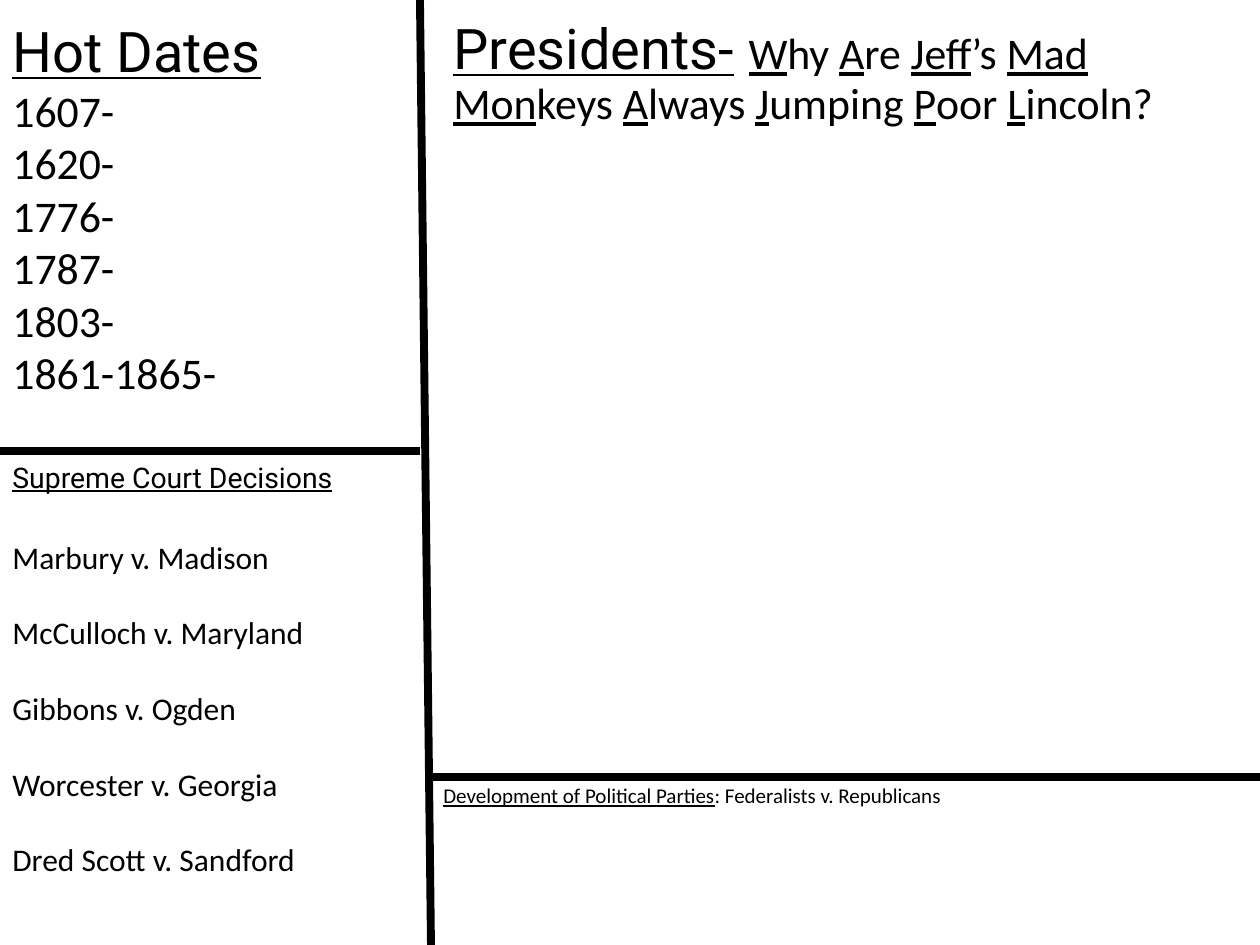
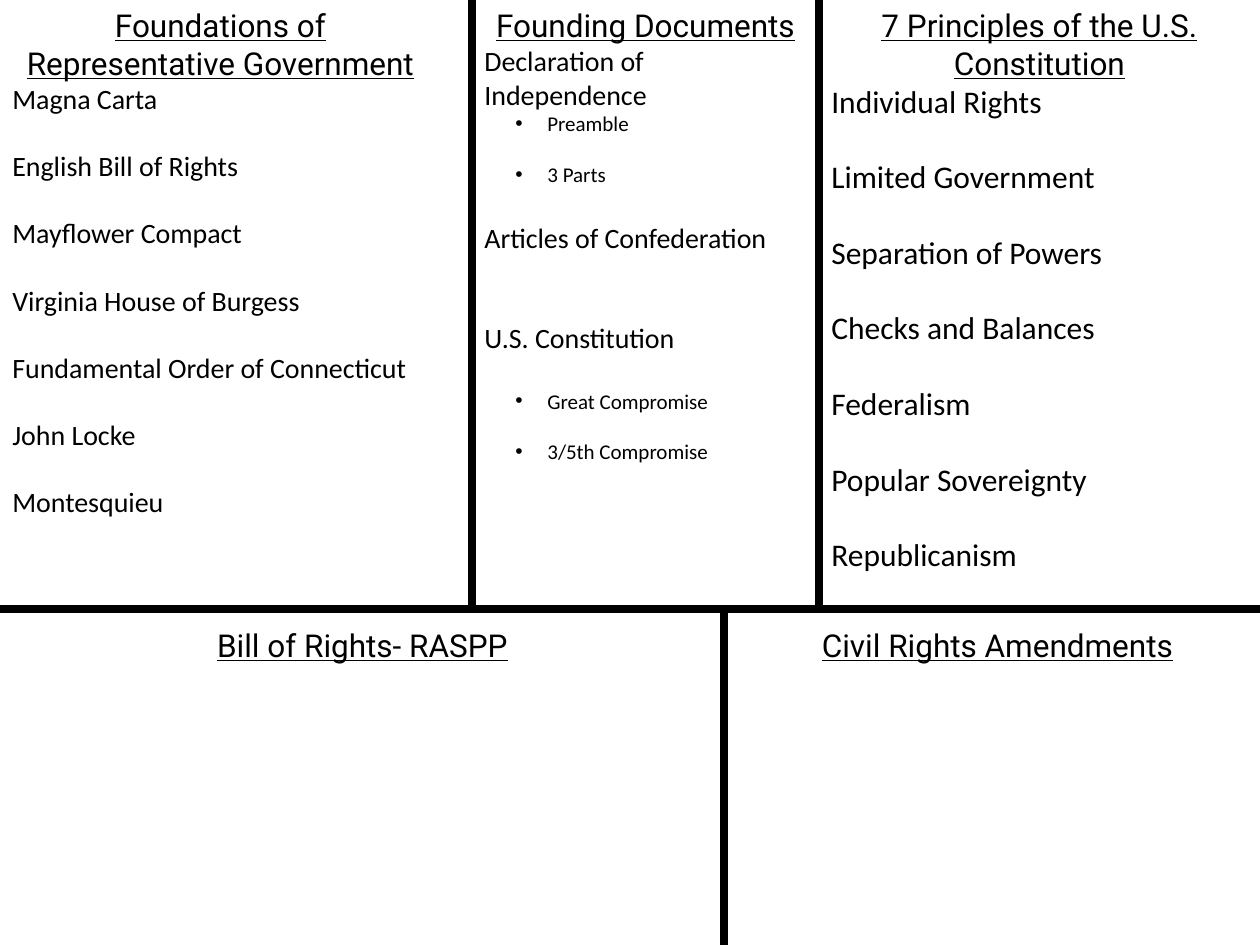
from dataclasses import dataclass

from lxml.etree import SubElement
from pptx import Presentation
from pptx.dml.color import RGBColor
from pptx.enum.shapes import MSO_CONNECTOR as Connector
from pptx.enum.text import MSO_ANCHOR as Anchor, PP_ALIGN as Align
from pptx.oxml.ns import qn
from pptx.slide import Slide
from pptx.text.text import TextFrame, _Paragraph as Paragraph
from pptx.util import Emu, Pt

PX_PER_INCH = 126
COLORS = {"ink": "000000"}
HEADING_FONT = "Roboto"
BODY_FONT = "Calibri"
RULE_WIDTH = 4.5
LINE_HEIGHT = 1.2
BULLET_INDENT = 63
BULLET_HANG = 32
INSET = 6


@dataclass(frozen=True)
class Area:
    left: int
    top: int
    width: int
    height: int


@dataclass(frozen=True)
class Rule:
    x1: int
    y1: int
    x2: int
    y2: int


@dataclass(frozen=True)
class Entry:
    text: str
    size: float = 16
    gap: float = 0
    bullet: bool = False


@dataclass(frozen=True)
class Section:
    area: Area
    heading: str
    entries: tuple[Entry, ...] = ()
    heading_size: float = 18
    align: Align = Align.CENTER
    anchor: Anchor = Anchor.TOP
    bottom_inset: int = INSET


def px(length: int) -> Emu:
    return Emu(round(length * 914400 / PX_PER_INCH))


def spaced(names: list[str], size: float, first_gap: float = 0) -> tuple[Entry, ...]:
    blank_line = size * LINE_HEIGHT
    return tuple(
        Entry(name, size, blank_line if index else first_gap)
        for index, name in enumerate(names)
    )


def add_text(paragraph: Paragraph, text: str, *, size: float, font: str = BODY_FONT,
             underline: bool = False, color: str = "ink") -> None:
    run = paragraph.add_run()
    run.text = text
    run.font.size = Pt(size)
    run.font.name = font
    run.font.underline = underline
    run.font.color.rgb = RGBColor.from_string(COLORS[color])


def add_marked_text(paragraph: Paragraph, marked: str, size: float) -> None:
    for index, part in enumerate(marked.split("_")):
        if part:
            add_text(paragraph, part, size=size, underline=index % 2 == 1)


def add_frame(slide: Slide, area: Area, anchor: Anchor = Anchor.TOP,
              top_inset: int = INSET, bottom_inset: int = INSET) -> TextFrame:
    box = slide.shapes.add_textbox(
        px(area.left), px(area.top), px(area.width), px(area.height))
    frame = box.text_frame
    frame.word_wrap = True
    frame.vertical_anchor = anchor
    frame.margin_top = px(top_inset)
    frame.margin_bottom = px(bottom_inset)
    return frame


def add_bullet(paragraph: Paragraph) -> None:
    properties = paragraph._p.get_or_add_pPr()
    properties.set("marL", str(px(BULLET_INDENT)))
    properties.set("indent", str(-px(BULLET_HANG)))
    SubElement(properties, qn("a:buFont"), typeface="Arial")
    SubElement(properties, qn("a:buChar"), char="•")


def draw_section(slide: Slide, section: Section) -> None:
    frame = add_frame(slide, section.area, section.anchor,
                      bottom_inset=section.bottom_inset)
    heading = frame.paragraphs[0]
    heading.alignment = section.align
    add_text(heading, section.heading, size=section.heading_size,
             font=HEADING_FONT, underline=True)
    for entry in section.entries:
        paragraph = frame.add_paragraph()
        paragraph.space_before = Pt(entry.gap)
        if entry.bullet:
            add_bullet(paragraph)
        add_text(paragraph, entry.text, size=entry.size)


def draw_rule(slide: Slide, rule: Rule) -> None:
    line = slide.shapes.add_connector(
        Connector.STRAIGHT, px(rule.x1), px(rule.y1), px(rule.x2), px(rule.y2))
    line.line.width = Pt(RULE_WIDTH)
    line.line.color.rgb = RGBColor.from_string(COLORS["ink"])
    SubElement(line._element.spPr, qn("a:effectLst"))


def draw_presidents(slide: Slide) -> None:
    mnemonic = add_frame(slide, Area(441, 21, 819, 231), top_inset=0).paragraphs[0]
    mnemonic.line_spacing = 0.9
    add_text(mnemonic, "Presidents-", size=32, font=HEADING_FONT, underline=True)
    add_text(mnemonic, " ", size=32, font=HEADING_FONT)
    add_marked_text(
        mnemonic,
        "_W_hy _A_re _Jeff_’s _Mad_ _Mon_keys _A_lways _J_umping _P_oor _L_incoln?",
        25)


def draw_parties(slide: Slide) -> None:
    parties = add_frame(slide, Area(431, 777, 829, 38)).paragraphs[0]
    add_marked_text(
        parties, "_Development of Political Parties_: Federalists v. Republicans", 12)


HISTORY_SECTIONS = [
    Section(
        Area(0, 431, 483, 514), "Supreme Court Decisions",
        spaced(["Marbury v. Madison", "McCulloch v. Maryland", "Gibbons v. Ogden",
                "Worcester v. Georgia", "Dred Scott v. Sandford"], 18, first_gap=25),
        heading_size=16.2, align=Align.LEFT, anchor=Anchor.MIDDLE, bottom_inset=44),
    Section(
        Area(0, -73, 399, 561), "Hot Dates",
        tuple(Entry(date, 25) for date in
              ("1607-", "1620-", "1776-", "1787-", "1803-", "1861-1865-")),
        heading_size=32, align=Align.LEFT, anchor=Anchor.MIDDLE),
]
HISTORY_RULES = [
    Rule(420, 0, 431, 945),
    Rule(0, 451, 420, 451),
    Rule(431, 777, 1260, 777),
]

GOVERNMENT_SECTIONS = [
    Section(
        Area(0, 0, 441, 606), "Foundations of Representative Government",
        spaced(["Magna Carta", "English Bill of Rights", "Mayflower Compact",
                "Virginia House of Burgess", "Fundamental Order of Connecticut",
                "John Locke", "Montesquieu"], 16)),
    Section(
        Area(819, 0, 441, 624), "7 Principles of the U.S. Constitution",
        spaced(["Individual Rights", "Limited Government", "Separation of Powers",
                "Checks and Balances", "Federalism", "Popular Sovereignty",
                "Republicanism"], 18)),
    Section(
        Area(472, 0, 347, 552), "Founding Documents",
        (Entry("Declaration of Independence"),
         Entry("Preamble", 12, bullet=True),
         Entry("3 Parts", 12, 14.4, bullet=True),
         Entry("Articles of Confederation", gap=19.2),
         Entry("U.S. Constitution", gap=38.4),
         Entry("Great Compromise", 12, 19.2, bullet=True),
         Entry("3/5th Compromise", 12, 14.4, bullet=True))),
    Section(Area(21, 620, 683, 50), "Bill of Rights- RASPP"),
    Section(Area(735, 620, 525, 50), "Civil Rights Amendments"),
]
GOVERNMENT_RULES = [
    Rule(0, 609, 1260, 609),
    Rule(472, 0, 472, 609),
    Rule(724, 609, 724, 945),
    Rule(819, 0, 819, 609),
]


def add_review_slide(deck: Presentation, sections: list[Section],
                     rules: list[Rule]) -> Slide:
    slide = deck.slides.add_slide(deck.slide_layouts[6])
    for section in sections:
        draw_section(slide, section)
    for rule in rules:
        draw_rule(slide, rule)
    return slide


def main() -> None:
    deck = Presentation()
    deck.slide_width = px(1260)
    deck.slide_height = px(945)
    history = add_review_slide(deck, HISTORY_SECTIONS, HISTORY_RULES)
    draw_presidents(history)
    draw_parties(history)
    add_review_slide(deck, GOVERNMENT_SECTIONS, GOVERNMENT_RULES)
    deck.save("out.pptx")


if __name__ == "__main__":
    main()
